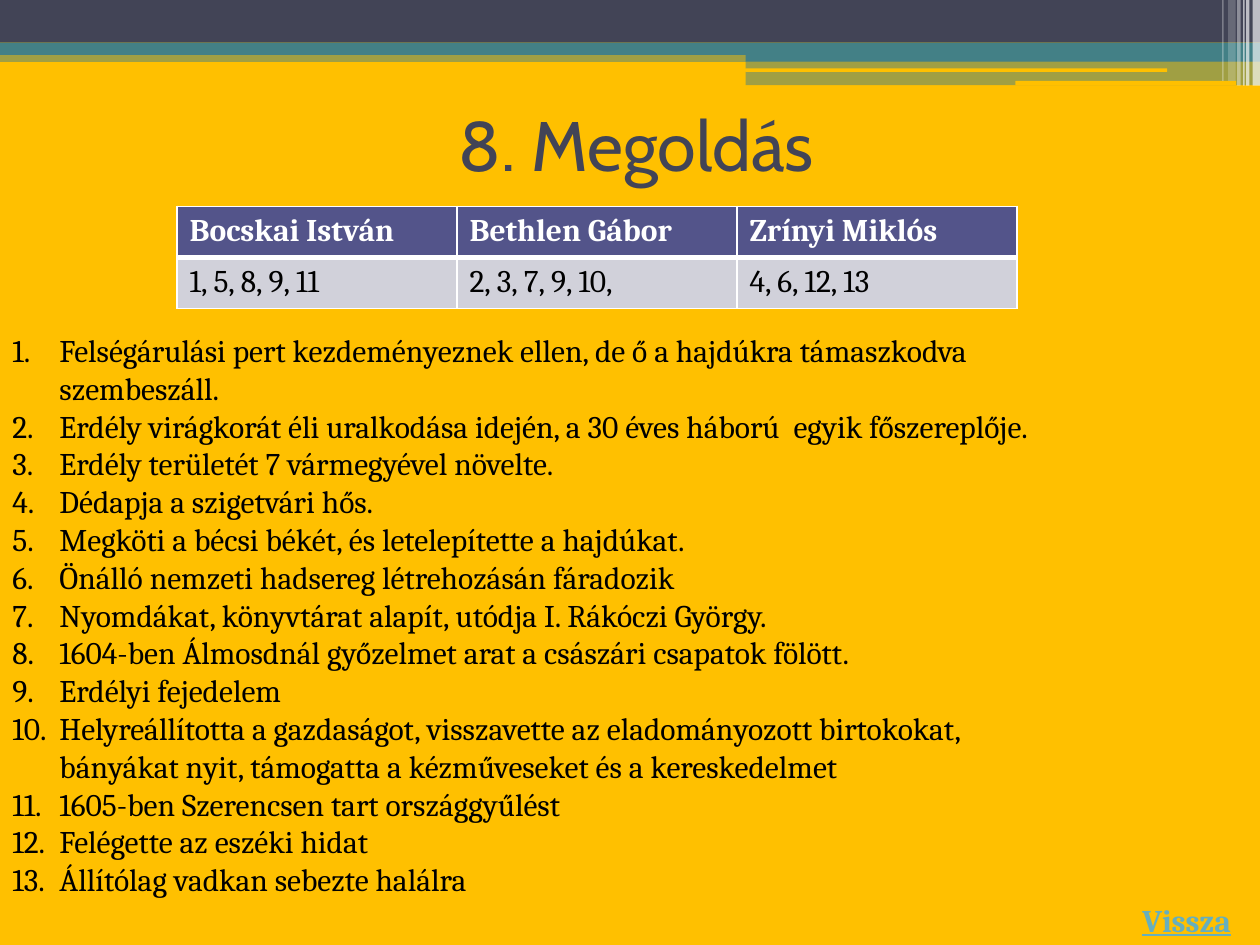
"""Build the quiz answer slide "8. Megoldás" with its table and numbered clues."""
from dataclasses import dataclass

from lxml.etree import SubElement
from pptx import Presentation
from pptx.dml.color import RGBColor
from pptx.enum.shapes import MSO_SHAPE
from pptx.enum.text import MSO_ANCHOR, MSO_AUTO_SIZE, PP_ALIGN
from pptx.oxml.ns import qn
from pptx.util import Cm, Pt


@dataclass(frozen=True)
class Theme:
    background: str = "FFC000"
    dark: str = "424456"
    teal: str = "438086"
    white: str = "FFFFFF"
    black: str = "000000"
    header: str = "53548A"
    row: str = "D1D1DA"
    link: str = "67AFBD"
    title_font: str = "Cabin"
    body_font: str = "Cambria"
    title_size: int = 40
    body_size: int = 18


THEME = Theme()
TITLE = "8. Megoldás"
BACK_LABEL = "Vissza"
ANSWERS = [
    ("Bocskai István", "Bethlen Gábor", "Zrínyi Miklós"),
    ("1, 5, 8, 9, 11", "2, 3, 7, 9, 10,", "4, 6, 12, 13"),
]
CLUES = [
    "Felségárulási pert kezdeményeznek ellen, de ő a hajdúkra támaszkodva szembeszáll.",
    "Erdély virágkorát éli uralkodása idején, a 30 éves háború  egyik főszereplője.",
    "Erdély területét 7 vármegyével növelte.",
    "Dédapja a szigetvári hős.",
    "Megköti a bécsi békét, és letelepítette a hajdúkat.",
    "Önálló nemzeti hadsereg létrehozásán fáradozik",
    "Nyomdákat, könyvtárat alapít, utódja I. Rákóczi György.",
    "1604-ben Álmosdnál győzelmet arat a császári csapatok fölött.",
    "Erdélyi fejedelem",
    "Helyreállította a gazdaságot, visszavette az eladományozott birtokokat, "
    "bányákat nyit, támogatta a kézműveseket és a kereskedelmet",
    "1605-ben Szerencsen tart országgyűlést",
    "Felégette az eszéki hidat",
    "Állítólag vadkan sebezte halálra",
]
BANDS = [
    (0, 1.02, 25.4, 0.23, THEME.teal, 50),
    (0, 0, 25.4, 0.86, THEME.dark, 100),
    (0, 0.86, 25.4, 0.25, THEME.teal, 100),
    (15.03, 0.99, 10.37, 0.25, THEME.teal, 100),
    (15.03, 1.23, 10.37, 0.49, THEME.teal, 50),
]
SLITS = [(15.02, 1.38, 8.51, 0.07), (20.47, 1.63, 4.45, 0.09)]
STRIPES = [
    (25.25, 0.15, 1.73, 65),
    (25.12, 0.07, 1.73, 65),
    (25.06, 0.03, 1.73, 60),
    (24.94, 0.07, 1.73, 40),
    (24.76, 0.15, 1.63, 20),
    (24.64, 0.03, 1.63, 30),
]


def colour(value):
    return RGBColor.from_string(value)


def add_bar(page, left, top, width, height, fill, opacity=100, kind=MSO_SHAPE.RECTANGLE):
    bar = page.shapes.add_shape(kind, Cm(left), Cm(top), Cm(width), Cm(height))
    bar.shadow.inherit = False
    bar.line.fill.background()
    bar.fill.solid()
    bar.fill.fore_color.rgb = colour(fill)
    if opacity < 100:
        shade = bar.fill._xPr.find(qn("a:solidFill"))[0]
        SubElement(shade, qn("a:alpha"), val=str(opacity * 1000))


def style(paragraph, shade, size=THEME.body_size, name=THEME.body_font, bold=False):
    font = paragraph.font
    font.name, font.size, font.bold = name, Pt(size), bold
    font.color.rgb = colour(shade)


def add_decoration(page):
    for band in BANDS:
        add_bar(page, *band)
    for slit in SLITS:
        add_bar(page, *slit, THEME.background, kind=MSO_SHAPE.ROUNDED_RECTANGLE)
    for left, width, height, opacity in STRIPES:
        add_bar(page, left, 0, width, height, THEME.white, opacity)


def add_title(page):
    title = page.shapes.title
    title.left, title.top, title.width, title.height = Cm(1.4), Cm(1.4), Cm(22.86), Cm(2.97)
    frame = title.text_frame
    frame.text = TITLE
    frame.vertical_anchor = MSO_ANCHOR.MIDDLE
    paragraph = frame.paragraphs[0]
    paragraph.alignment = PP_ALIGN.CENTER
    style(paragraph, THEME.dark, THEME.title_size, THEME.title_font)


def set_borders(cell, **points):
    properties = cell._tc.get_or_add_tcPr()
    for side, width in points.items():
        line = SubElement(properties, qn(f"a:ln{side}"), w=str(Pt(width)))
        SubElement(SubElement(line, qn("a:solidFill")), qn("a:srgbClr"), val=THEME.white)


def add_answers(page):
    rows, columns = len(ANSWERS), len(ANSWERS[0])
    table = page.shapes.add_table(
        rows, columns, Cm(3.57), Cm(4.16), Cm(16.93), Cm(2.06)).table
    for row, texts in enumerate(ANSWERS):
        head = row == 0
        for column, text in enumerate(texts):
            cell = table.cell(row, column)
            cell.text = text
            style(cell.text_frame.paragraphs[0],
                  THEME.white if head else THEME.black, bold=head)
            set_borders(cell, L=1, R=1, T=1 if head else 3, B=3 if head else 1)
            cell.fill.solid()
            cell.fill.fore_color.rgb = colour(THEME.header if head else THEME.row)


def add_clues(page):
    box = page.shapes.add_textbox(Cm(0), Cm(6.55), Cm(22.02), Cm(12.57))
    frame = box.text_frame
    frame.word_wrap = True
    frame.text = "\n".join(CLUES)
    indent = Cm(0.95)
    for paragraph in frame.paragraphs:
        style(paragraph, THEME.black)
        properties = paragraph._p.get_or_add_pPr()
        properties.set("marL", str(indent))
        properties.set("indent", str(-indent))
        numbering = properties.makeelement(qn("a:buAutoNum"), {"type": "arabicPeriod"})
        properties.insert(0, numbering)


def add_back_label(page):
    box = page.shapes.add_textbox(Cm(22.78), Cm(18.03), Cm(2.62), Cm(1.02))
    frame = box.text_frame
    frame.word_wrap = False
    frame.auto_size = MSO_AUTO_SIZE.SHAPE_TO_FIT_TEXT
    frame.text = BACK_LABEL
    paragraph = frame.paragraphs[0]
    style(paragraph, THEME.link, bold=True)
    paragraph.font.underline = True


def main():
    deck = Presentation()
    deck.slide_width, deck.slide_height = Cm(25.4), Cm(19.05)
    page = deck.slides.add_slide(deck.slide_layouts[5])
    page.background.fill.solid()
    page.background.fill.fore_color.rgb = colour(THEME.background)
    add_decoration(page)
    add_title(page)
    add_back_label(page)
    add_answers(page)
    add_clues(page)
    deck.save("out.pptx")


if __name__ == "__main__":
    main()
